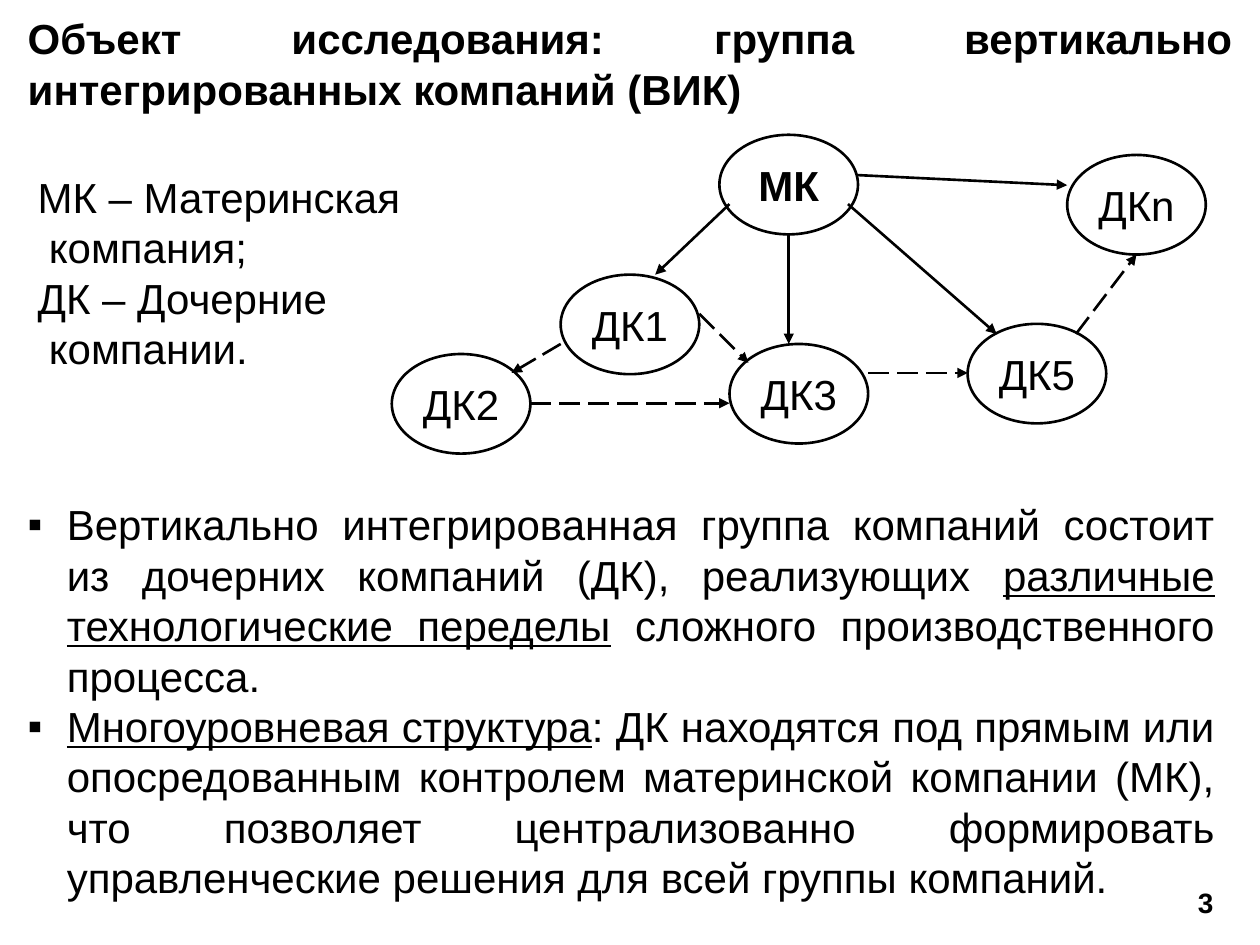
from dataclasses import dataclass

from lxml import etree
from pptx import Presentation, util as u
from pptx.dml.color import RGBColor
from pptx.enum import dml, shapes, text
from pptx.oxml import ns


@dataclass(frozen=True)
class Theme:
    font: str = "Arial"
    ink: RGBColor = RGBColor(0, 0, 0)
    main: int = 24
    small: int = 16
    line: float = 1.5


THEME = Theme()
ALIGN = text.PP_ALIGN
NODE = (1.1, 0.79)

# Company: left, top
NODES = {
    "МК": (5.71, 1.07),
    "ДК1": (4.45, 2.18),
    "ДКn": (8.47, 1.23),
    "ДК2": (3.11, 2.81),
    "ДК3": (5.79, 2.73),
    "ДК5": (7.68, 2.57),
}

# Control by the parent company: from, to
CONTROL = [
    ((5.79, 1.62), (5.2, 2.18)),
    ((6.26, 1.86), (6.26, 2.73)),
    ((6.73, 1.62), (7.91, 2.65)),
    ((6.81, 1.39), (8.47, 1.47)),
]

# Flow between the subsidiaries: from, to
FLOW = [
    ((4.45, 2.73), (4.06, 2.96)),
    ((5.55, 2.49), (5.94, 2.88)),
    ((8.54, 2.65), (9.02, 2.02)),
    ((4.21, 3.2), (5.79, 3.2)),
    ((6.89, 2.96), (7.68, 2.96)),
]

# A pair of | marks underlined words
POINTS = [
    "Вертикально интегрированная группа компаний состоит из дочерних компаний "
    "(ДК), реализующих |различные технологические переделы| сложного "
    "производственного процесса.",
    "|Многоуровневая структура|: ДК находятся под прямым или опосредованным "
    "контролем материнской компании (МК), что позволяет централизованно "
    "формировать управленческие решения для всей группы компаний.",
]


def place(shape, left, top, width, height):
    shape.left, shape.top = u.Inches(left), u.Inches(top)
    shape.width, shape.height = u.Inches(width), u.Inches(height)


def write(shape, lines, size=THEME.main, bold=False, align=ALIGN.JUSTIFY,
          anchor=text.MSO_ANCHOR.TOP, wrap=True):
    frame = shape.text_frame
    frame.word_wrap = wrap
    frame.auto_size = text.MSO_AUTO_SIZE.NONE
    frame.vertical_anchor = anchor
    for i, line in enumerate(lines):
        para = frame.add_paragraph() if i else frame.paragraphs[0]
        para.alignment = align
        para.space_before = u.Pt(0)
        for j, part in enumerate(line.split("|")):
            if not part:
                continue
            run = para.add_run()
            run.text = part
            font = run.font
            font.name, font.size, font.bold = THEME.font, u.Pt(size), bold
            font.color.rgb = THEME.ink
            if j % 2:
                font.underline = True
    return frame.paragraphs


def indent(para, left, first=0.0, mark=None):
    props = para._p.get_or_add_pPr()
    props.set("marL", str(u.Inches(left)))
    props.set("indent", str(u.Inches(first)))
    if mark:
        face = etree.SubElement(props, ns.qn("a:buFont"))
        face.set("typeface", THEME.font)
        etree.SubElement(props, ns.qn("a:buChar")).set("char", mark)


def add_label(slide, box, lines, **fmt):
    label = slide.shapes.add_textbox(*map(u.Inches, box))
    return write(label, lines, **fmt)


def add_node(slide, name, spot):
    node = slide.shapes.add_shape(
        shapes.MSO_SHAPE.OVAL, *map(u.Inches, spot + NODE))
    node.shadow.inherit = False
    node.fill.background()
    node.line.color.rgb = THEME.ink
    node.line.width = u.Pt(THEME.line)
    write(node, [name], bold=name == "МК", align=ALIGN.CENTER,
          anchor=text.MSO_ANCHOR.MIDDLE, wrap=False)


def add_arrow(slide, start, end, dash=False):
    arrow = slide.shapes.add_connector(
        shapes.MSO_CONNECTOR.STRAIGHT, *map(u.Inches, start + end))
    arrow.line.color.rgb = THEME.ink
    arrow.line.width = u.Pt(THEME.line)
    if dash:
        arrow.line.dash_style = dml.MSO_LINE.LONG_DASH
    props = arrow.line._get_or_add_ln()
    etree.SubElement(props, ns.qn("a:tailEnd")).set("type", "triangle")
    etree.SubElement(arrow._element.spPr, ns.qn("a:effectLst"))


def main():
    deck = Presentation()
    deck.slide_width, deck.slide_height = u.Inches(10), u.Inches(7.5)
    slide = deck.slides.add_slide(deck.slide_layouts[1])

    # Title and page number
    title, body = slide.placeholders
    place(title, 0.12, 0.05, 9.76, 0.87)
    write(title, ["Объект исследования: группа вертикально "
                  "интегрированных компаний (ВИК)"], bold=True)
    add_label(slide, (9.17, 6.98, 0.56, 0.31), ["3"],
              size=THEME.small, bold=True, align=ALIGN.RIGHT)

    # Group diagram
    for name, spot in NODES.items():
        add_node(slide, name, spot)
    for start, end in CONTROL:
        add_arrow(slide, start, end)
    for start, end in FLOW:
        add_arrow(slide, start, end, dash=True)

    # Legend, with the second line of each entry set in
    legend = add_label(slide, (0.2, 1.31, 3.32, 1.82), [
        "МК – Материнская", "компания;", "ДК – Дочерние", "компании."])
    for para in legend[1::2]:
        indent(para, 0.09)

    # Key points
    place(body, 0.12, 3.91, 9.62, 3.39)
    for para in write(body, POINTS):
        indent(para, 0.31, -0.31, mark="▪")

    deck.save("out.pptx")


if __name__ == "__main__":
    main()
